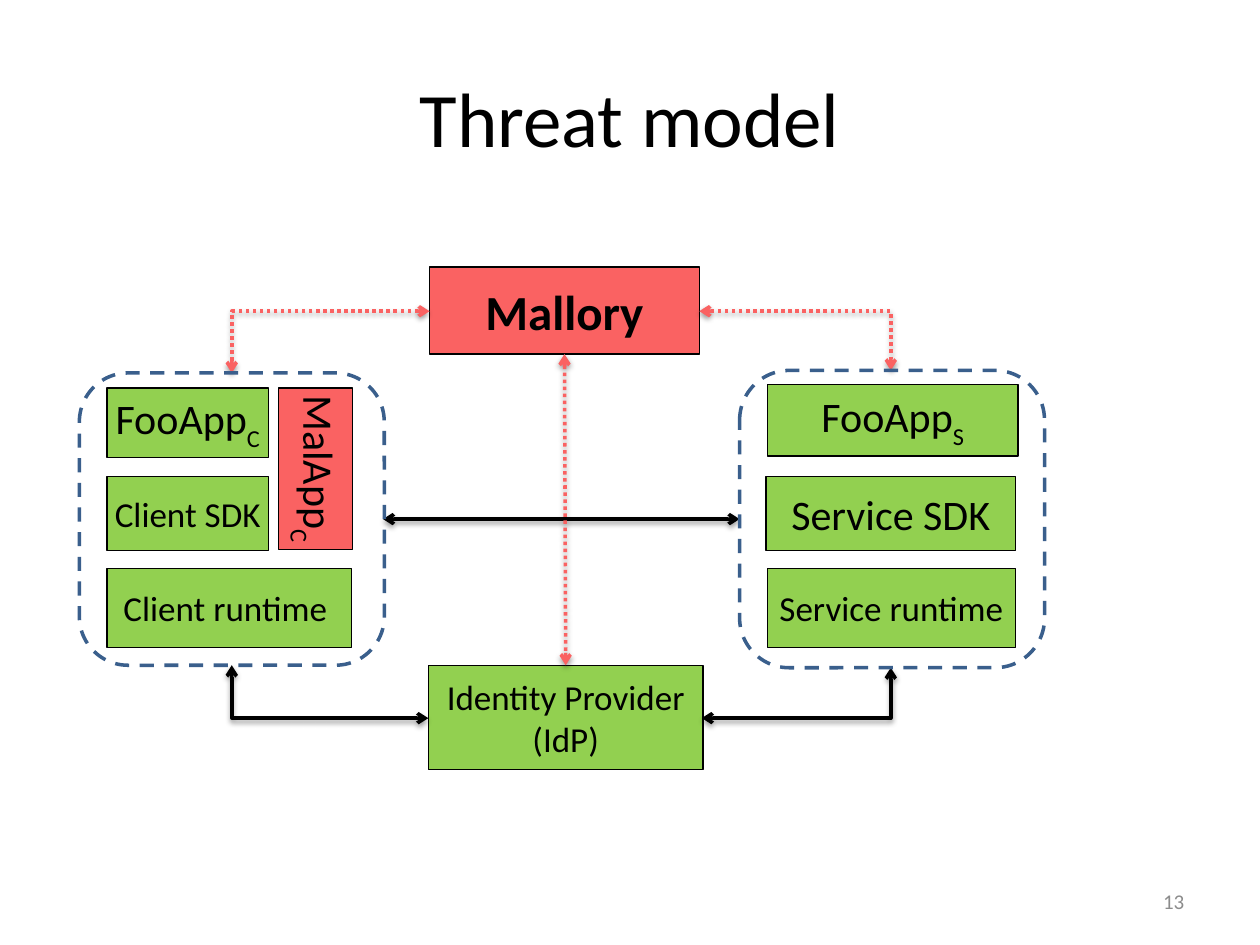
from lxml import etree
from pptx import Presentation
from pptx.dml.color import RGBColor
from pptx.enum.dml import MSO_LINE
from pptx.enum.shapes import MSO_CONNECTOR, MSO_SHAPE
from pptx.enum.text import MSO_ANCHOR, PP_ALIGN
from pptx.oxml import parse_xml
from pptx.oxml.ns import nsdecls, qn
from pptx.util import Inches, Pt

DASH, DOT = MSO_LINE.DASH, MSO_LINE.ROUND_DOT
RECT, ROUND = MSO_SHAPE.RECTANGLE, MSO_SHAPE.ROUNDED_RECTANGLE
STRAIGHT = MSO_CONNECTOR.STRAIGHT
MIDDLE = MSO_ANCHOR.MIDDLE
CENTER, RIGHT = PP_ALIGN.CENTER, PP_ALIGN.RIGHT

COLORS = {"black": "000000", "green": "92D050", "red": "FA6262",
          "blue": "3A5F8C", "gray": "8C8C8C"}
FRAME = {"margin_left": 0, "margin_right": 0, "margin_top": 0,
         "margin_bottom": 0, "word_wrap": True, "vertical_anchor": MIDDLE}
SHADOW = (f'<a:effectLst {nsdecls("a")}><a:outerShdw blurRad="39370" dist="20320" '
          'dir="5400000" rotWithShape="0"><a:srgbClr val="000000">'
          '<a:alpha val="38000"/></a:srgbClr></a:outerShdw></a:effectLst>')


class Sketch:
    """Draws styled elements on one slide, on a grid of 100 columns by 75 rows."""

    def __init__(self, deck):
        self.slide = deck.slides.add_slide(deck.slide_layouts[6])
        self.shapes = self.slide.shapes
        self.col = deck.slide_width / 100
        self.row = deck.slide_height / 75

    def place(self, *cells):
        units = (self.col, self.row) * 2
        return [round(cell * unit) for cell, unit in zip(cells, units)]

    def color(self, name):
        return RGBColor.from_string(COLORS[name])

    def stroke(self, line, name, width, dash=None):
        line.color.rgb = self.color(name)
        line.width = Pt(width)
        if dash:
            line.dash_style = dash

    def letter(self, shape, text, size, sub="", color="black", align=CENTER, bold=False):
        frame = shape.text_frame
        for key, value in FRAME.items():
            setattr(frame, key, value)
        para = frame.paragraphs[0]
        para.alignment = align
        style = {"name": "Calibri", "size": Pt(size), "bold": bold}
        for part in filter(None, (text, sub)):
            run = para.add_run()
            run.text = part
            for key, value in style.items():
                setattr(run.font, key, value)
            run.font.color.rgb = self.color(color)
        if sub:
            run.font._element.set("baseline", "-30000")

    def label(self, cells, text, size, **style):
        self.letter(self.shapes.add_textbox(*self.place(*cells)), text, size, **style)

    def box(self, cells, text, size, fill="green", turn=False, **style):
        shape = self.shapes.add_shape(RECT, *self.place(*cells))
        shape.shadow.inherit = False
        shape.fill.solid()
        shape.fill.fore_color.rgb = self.color(fill)
        self.stroke(shape.line, "black", 0.75)
        self.letter(shape, text, size, **style)
        if turn:
            shape.text_frame._txBody.bodyPr.set("vert", "vert")

    def group(self, cells):
        shape = self.shapes.add_shape(ROUND, *self.place(*cells))
        shape.shadow.inherit = False
        shape.fill.background()
        self.stroke(shape.line, "blue", 2, DASH)

    def arrow(self, cells, color="black", dash=None, bent=False):
        link = self.shapes.add_connector(STRAIGHT, *self.place(*cells))
        self.stroke(link.line, color, 2, dash)
        props = link._element.spPr
        if bent:
            props.find(qn("a:prstGeom")).set("prst", "bentConnector2")
        for end in ("a:headEnd", "a:tailEnd"):
            etree.SubElement(props.find(qn("a:ln")), qn(end), type="arrow")
        props.append(parse_xml(SHADOW))


def main():
    deck = Presentation()
    deck.slide_width, deck.slide_height = Inches(10), Inches(7.5)
    art = Sketch(deck)
    art.label((5, 3, 90, 12.5), "Threat model", 44)
    art.label((71.7, 69.5, 22.3, 4), "13", 12, color="gray", align=RIGHT)

    for cells, text, size, sub in (
        ((8.5, 30.8, 12.8, 5.5), "FooApp", 24, "C"),
        ((8.5, 37.8, 12.8, 5.9), "Client SDK", 20, ""),
        ((8.5, 45.1, 19.4, 6.3), "Client runtime ", 20, ""),
        ((34, 52.8, 21.8, 8.3), "Identity Provider (IdP)", 20, ""),
        ((60.9, 30.5, 19.9, 5.7), "FooApp", 24, "S"),
        ((60.8, 37.8, 19.8, 5.9), "Service SDK", 24, ""),
        ((60.9, 45.1, 19.7, 6.3), "Service runtime", 20, ""),
    ):
        art.box(cells, text, size, sub=sub)

    art.arrow((30.4, 41.2, 58.7, 41.2))
    for cells in ((34, 57, 18.4, 52.8), (55.7, 57, 70.7, 53)):
        art.arrow(cells, bent=True)

    art.box((22.1, 30.8, 5.9, 12.8), "MalApp", 24, fill="red", sub="C", turn=True)
    art.box((34.1, 21.2, 21.4, 6.9), "Mallory", 28, fill="red", bold=True)
    art.arrow((44.8, 28.1, 44.9, 52.8), "red", DOT)
    for cells in ((55.5, 24.7, 70.7, 29.4), (34.1, 24.7, 18.4, 29.6)):
        art.arrow(cells, "red", DOT, bent=True)

    for cells in ((58.7, 29.4, 24.2, 23.6), (6.3, 29.6, 24.2, 23.2)):
        art.group(cells)
    deck.save("out.pptx")


if __name__ == "__main__":
    main()
